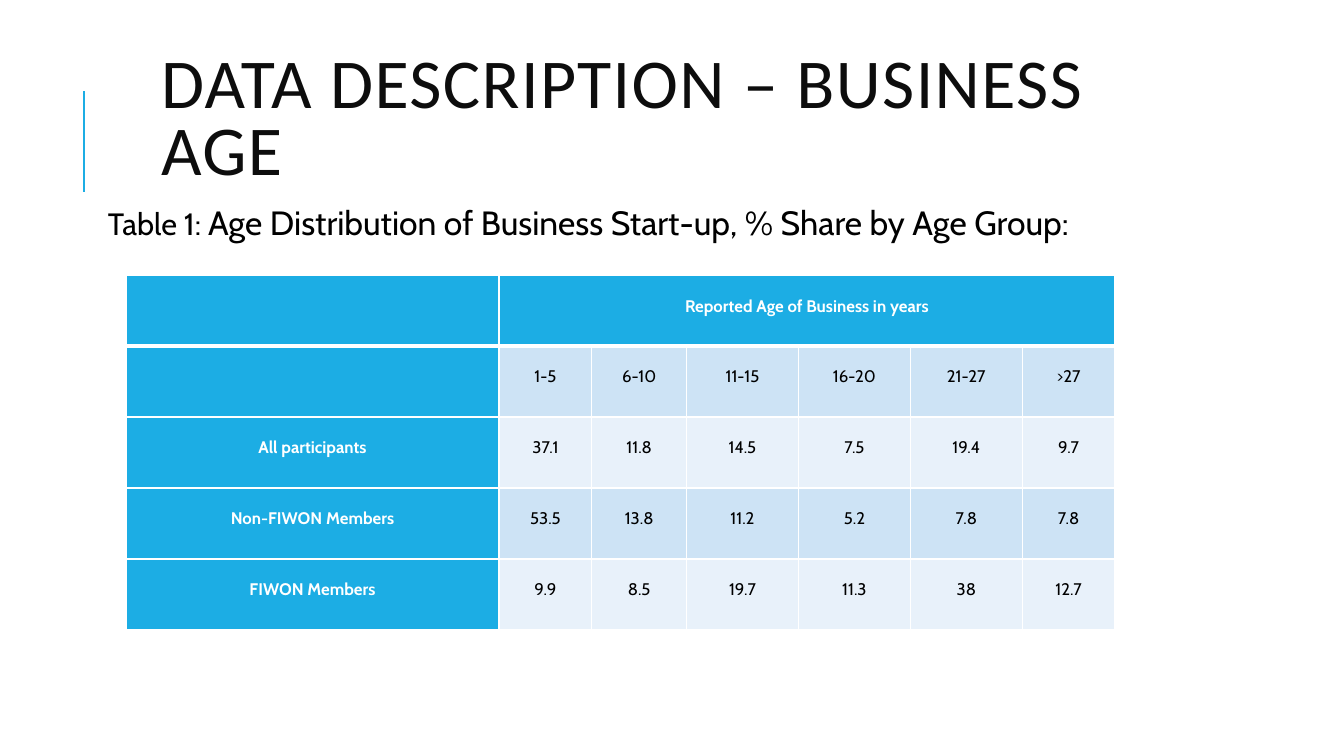
import dataclasses

import pptx
import pptx.dml.color
import pptx.enum.shapes
import pptx.enum.text
import pptx.oxml.ns
import pptx.util
from lxml import etree

Inches = pptx.util.Inches
ANCHOR = pptx.enum.text.MSO_ANCHOR
ALIGN = pptx.enum.text.PP_ALIGN
BLUE, WHITE, BLACK = "1CADE4", "FFFFFF", "000000"
BANDS = ("CDE3F5", "E8F1FA")
WIDTHS = (3.7, 0.92, 0.94, 1.11, 1.11, 1.11, 0.92)
ROWS = (
    ("", "Reported Age of Business in years", "", "", "", "", ""),
    ("", "1-5", "6-10", "11-15", "16-20", "21-27", ">27"),
    ("All participants", "37.1", "11.8", "14.5", "7.5", "19.4", "9.7"),
    ("Non-FIWON Members", "53.5", "13.8", "11.2", "5.2", "7.8", "7.8"),
    ("FIWON Members", "9.9", "8.5", "19.7", "11.3", "38", "12.7"),
)


@dataclasses.dataclass
class Run:
    text: str
    size: float
    font: str = "Cabin"
    color: str = BLACK
    bold: bool = False
    track: int = 0


@dataclasses.dataclass
class Box:
    left: float
    top: float
    width: float
    height: float
    inset: tuple[float, float]
    anchor: ANCHOR
    pitch: float
    runs: list[Run]
    indent: float = 0
    before: float = 0
    after: float = 0


BOXES = (
    Box(1.5, 0.75, 10, 0.91, (0.1, 0.05), ANCHOR.MIDDLE, 0.8,
        [Run("DATA DESCRIPTION – BUSINESS AGE", 50, "Calibri", "0D0D0D", track=100)]),
    Box(0.92, 2, 10.3, 4.76, (0.05, 0.05), ANCHOR.TOP, 0.9,
        [Run("Table 1: ", 22),
         Run("Age Distribution of Business Start-up, % Share by Age Group:", 24)],
        indent=0.1, before=12, after=2),
)


def paint(code: str) -> pptx.dml.color.RGBColor:
    return pptx.dml.color.RGBColor.from_string(code)


def add_run(para, item: Run) -> None:
    run = para.add_run()
    run.text = item.text
    font = run.font
    font.name, font.size, font.bold = item.font, pptx.util.Pt(item.size), item.bold
    font.color.rgb = paint(item.color)
    if item.track:
        run._r.get_or_add_rPr().set("spc", str(item.track))


def add_box(slide, box: Box) -> None:
    shape = slide.shapes.add_textbox(
        *map(Inches, (box.left, box.top, box.width, box.height)))
    frame = shape.text_frame
    frame.word_wrap = True
    frame.vertical_anchor = box.anchor
    frame.margin_left = frame.margin_right = Inches(box.inset[0])
    frame.margin_top = frame.margin_bottom = Inches(box.inset[1])
    para = frame.paragraphs[0]
    para.line_spacing = box.pitch
    para.space_before = pptx.util.Pt(box.before)
    para.space_after = pptx.util.Pt(box.after)
    if box.indent:
        para._p.get_or_add_pPr().set("marL", str(Inches(box.indent)))
    for item in box.runs:
        add_run(para, item)


def add_edge(cell, side: str, points: float) -> None:
    name = pptx.oxml.ns.qn
    line = etree.SubElement(cell._tc.get_or_add_tcPr(), name(f"a:ln{side}"),
                            w=str(pptx.util.Pt(points)))
    fill = etree.SubElement(line, name("a:solidFill"))
    etree.SubElement(fill, name("a:srgbClr"), val=WHITE)


def fill_cell(cell, row: int, col: int, text: str) -> None:
    head = row == 0 or col == 0
    for side in "LRTB":
        thick = (row, side) in ((0, "B"), (1, "T"))
        add_edge(cell, side, 3 if thick else 1)
    cell.fill.solid()
    cell.fill.fore_color.rgb = paint(BLUE if head else BANDS[(row - 1) % 2])
    if text:
        cell.margin_left = cell.margin_right = Inches(0.07)
        cell.margin_top = cell.margin_bottom = 0
        para = cell.text_frame.paragraphs[0]
        para.alignment = ALIGN.CENTER
        para.line_spacing = 2.0
        add_run(para, Run(text, 12, color=WHITE if head else BLACK, bold=head))


def add_grid(slide) -> None:
    frame = slide.shapes.add_table(len(ROWS), len(WIDTHS), Inches(1.25), Inches(2.73),
                                   Inches(9.83), Inches(3.52))
    table = frame.table
    table.first_row = table.horz_banding = False
    for col, width in zip(table.columns, WIDTHS):
        col.width = Inches(width)
    for row, texts in enumerate(ROWS):
        for col, text in enumerate(texts):
            fill_cell(table.cell(row, col), row, col, text)
    table.cell(0, 1).merge(table.cell(0, len(WIDTHS) - 1))


def add_rule(slide) -> None:
    rule = slide.shapes.add_connector(pptx.enum.shapes.MSO_CONNECTOR.STRAIGHT,
                                      *map(Inches, (0.83, 1.9, 0.83, 0.9)))
    rule.line.color.rgb = paint(BLUE)
    rule.line.width = pptx.util.Pt(1.5)
    etree.SubElement(rule._element.spPr, pptx.oxml.ns.qn("a:effectLst"))


def main() -> None:
    deck = pptx.Presentation()
    deck.slide_width, deck.slide_height = Inches(13.33), Inches(7.5)
    slide = deck.slides.add_slide(deck.slide_layouts[6])
    add_rule(slide)
    for box in BOXES:
        add_box(slide, box)
    add_grid(slide)
    deck.save("out.pptx")


if __name__ == "__main__":
    main()
